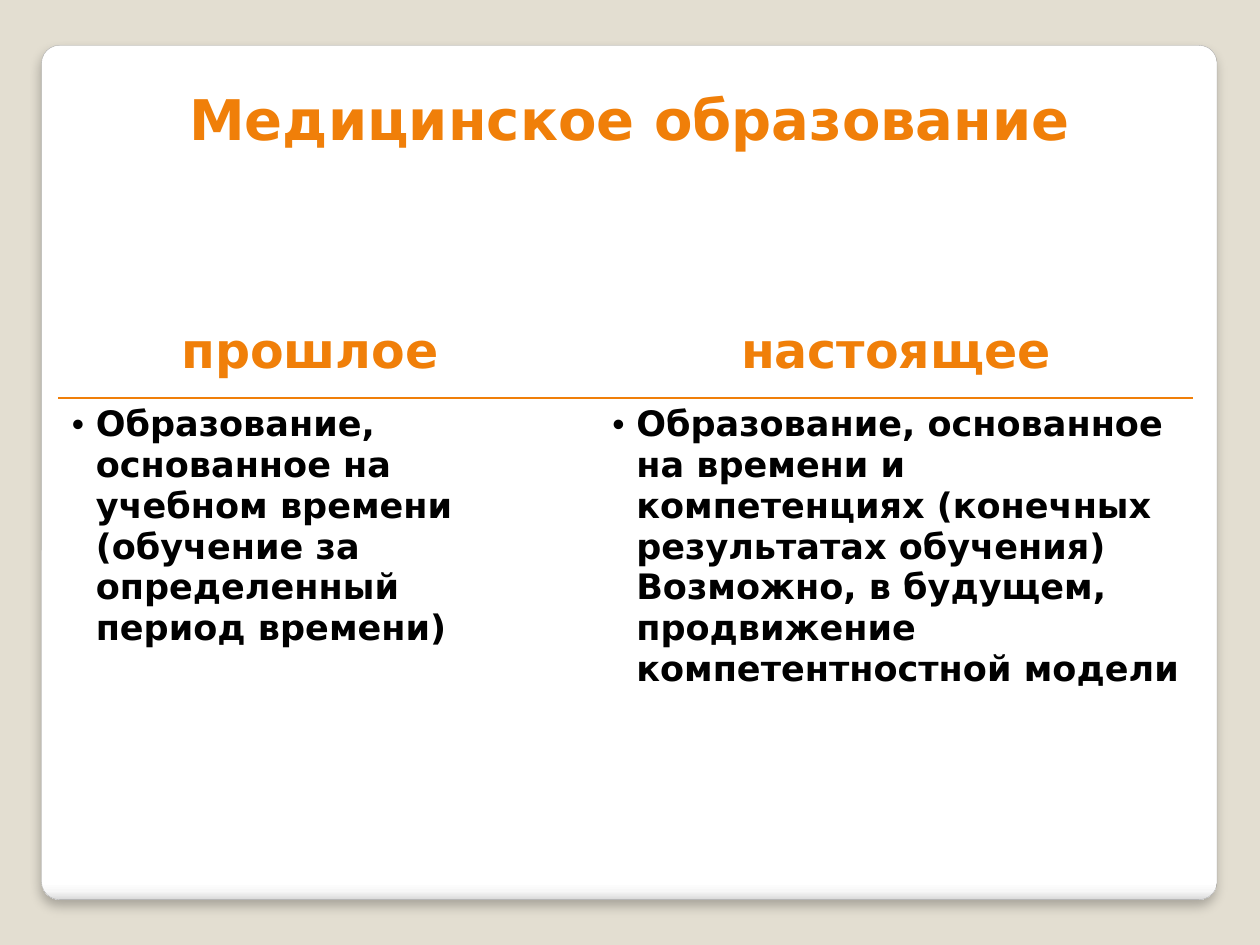
from lxml import etree
from pptx import Presentation
from pptx import util as u
from pptx.dml.color import RGBColor
from pptx.enum import shapes, text
from pptx.oxml import parse_xml
from pptx.oxml.ns import nsdecls, qn

BEIGE = RGBColor(0xE3, 0xDE, 0xD1)
ORANGE = RGBColor(0xF0, 0x7F, 0x09)
BLACK = RGBColor(0, 0, 0)
GRAY = RGBColor(0xA4, 0xA4, 0xA4)
PANEL_STOPS = [(0, "FFFFFF"), (98, "FFFFFF"), (99, "F7F7F7"), (100, "DADADA")]

COLUMN_WIDTHS = [3.98, 0.31, 4.7]
ROW_HEIGHTS = [0.74, 3.17]
HEADINGS = ["прошлое", "", "настоящее"]
BODIES = [
    ["Образование, основанное на учебном времени (обучение за определенный период времени)"],
    [],
    ["Образование, основанное на времени и компетенциях (конечных результатах обучения)",
     "Возможно, в будущем, продвижение компетентностной модели"],
]


class SlideBuilder:
    font = "DejaVu Sans"

    def __init__(self, s):
        self.s = s

    def background(self, color):
        fill = self.s.background.fill
        fill.solid()
        fill.fore_color.rgb = color

    def panel(self, left, top, width, height):
        """Rounded card with a darkened bottom edge and a soft shadow."""
        sp = self.s.shapes.add_shape(
            shapes.MSO_SHAPE.ROUNDED_RECTANGLE,
            *map(u.Inches, (left, top, width, height)))
        sp.adjustments[0] = 0.021
        sp.line.color.rgb = GRAY
        sp.line.width = u.Pt(0.16)
        sp.shadow.inherit = False
        sp.fill.gradient()
        sp.fill.gradient_angle = 270
        stops = sp._element.spPr.find(".//" + qn("a:gsLst"))
        for old in list(stops):
            stops.remove(old)
        for percent, color in PANEL_STOPS:
            gs = etree.SubElement(stops, qn("a:gs"), pos=str(percent * 1000))
            etree.SubElement(gs, qn("a:srgbClr"), val=color)
        sp._element.spPr.find(qn("a:effectLst")).append(parse_xml(
            f'<a:outerShdw {nsdecls("a")} blurRad="{u.Pt(6)}" dist="{u.Pt(4)}" '
            'dir="5400000" algn="t" rotWithShape="0"><a:srgbClr val="000000">'
            '<a:alpha val="25000"/></a:srgbClr></a:outerShdw>'))

    def run(self, p, words, size, color):
        r = p.add_run()
        r.text = words
        r.font.name = self.font
        r.font.size = u.Pt(size)
        r.font.bold = True
        r.font.color.rgb = color

    def title(self, words, left, top, width, height):
        tf = self.s.shapes.add_textbox(
            *map(u.Inches, (left, top, width, height))).text_frame
        tf.word_wrap = True
        tf.vertical_anchor = text.MSO_ANCHOR.BOTTOM
        p = tf.paragraphs[0]
        p.alignment = text.PP_ALIGN.CENTER
        self.run(p, words, 32, ORANGE)

    def table(self, left, top):
        frame = self.s.shapes.add_table(
            len(ROW_HEIGHTS), len(COLUMN_WIDTHS), u.Inches(left), u.Inches(top),
            u.Inches(sum(COLUMN_WIDTHS)), u.Inches(sum(ROW_HEIGHTS)))
        table = frame.table
        table.first_row = table.horz_banding = False
        for column, width in zip(table.columns, COLUMN_WIDTHS):
            column.width = u.Inches(width)
        for row, height in zip(table.rows, ROW_HEIGHTS):
            row.height = u.Inches(height)
        for i, (heading, body) in enumerate(zip(HEADINGS, BODIES)):
            self.heading(table.cell(0, i), heading)
            self.body(table.cell(1, i), body)

    def heading(self, cell, words):
        self.rule(cell, "lnB")
        cell.vertical_anchor = text.MSO_ANCHOR.MIDDLE
        if words:
            p = cell.text_frame.paragraphs[0]
            p.alignment = text.PP_ALIGN.CENTER
            self.run(p, words, 28, ORANGE)

    def body(self, cell, paragraphs):
        """Bullet the first paragraph and align the others with its text."""
        self.rule(cell, "lnT")
        tf = cell.text_frame
        for i, words in enumerate(paragraphs):
            p = tf.add_paragraph() if i else tf.paragraphs[0]
            pPr = p._p.get_or_add_pPr()
            pPr.set("marL", str(u.Inches(0.19)))
            pPr.set("indent", str(0 if i else -u.Inches(0.19)))
            if i:
                etree.SubElement(pPr, qn("a:buNone"))
            else:
                etree.SubElement(pPr, qn("a:buFont"), typeface="Arial")
                etree.SubElement(pPr, qn("a:buChar"), char="•")
            self.run(p, words, 20, BLACK)

    def rule(self, cell, side):
        """Clear the cell's fill and draw an orange border on one side."""
        cell.fill.background()
        cell._tc.get_or_add_tcPr().insert(0, parse_xml(
            f'<a:{side} {nsdecls("a")} w="{u.Pt(1)}"><a:solidFill>'
            f'<a:srgbClr val="{ORANGE}"/></a:solidFill></a:{side}>'))


def main():
    prs = Presentation()
    prs.slide_width = u.Inches(10)
    prs.slide_height = u.Inches(7.5)
    slide = SlideBuilder(prs.slides.add_slide(prs.slide_layouts[6]))
    slide.background(BEIGE)
    slide.panel(0.33, 0.36, 9.33, 6.78)
    slide.table(0.47, 2.42)
    slide.title("Медицинское образование", 0, 0.3, 10, 0.95)
    prs.save("out.pptx")


if __name__ == "__main__":
    main()
